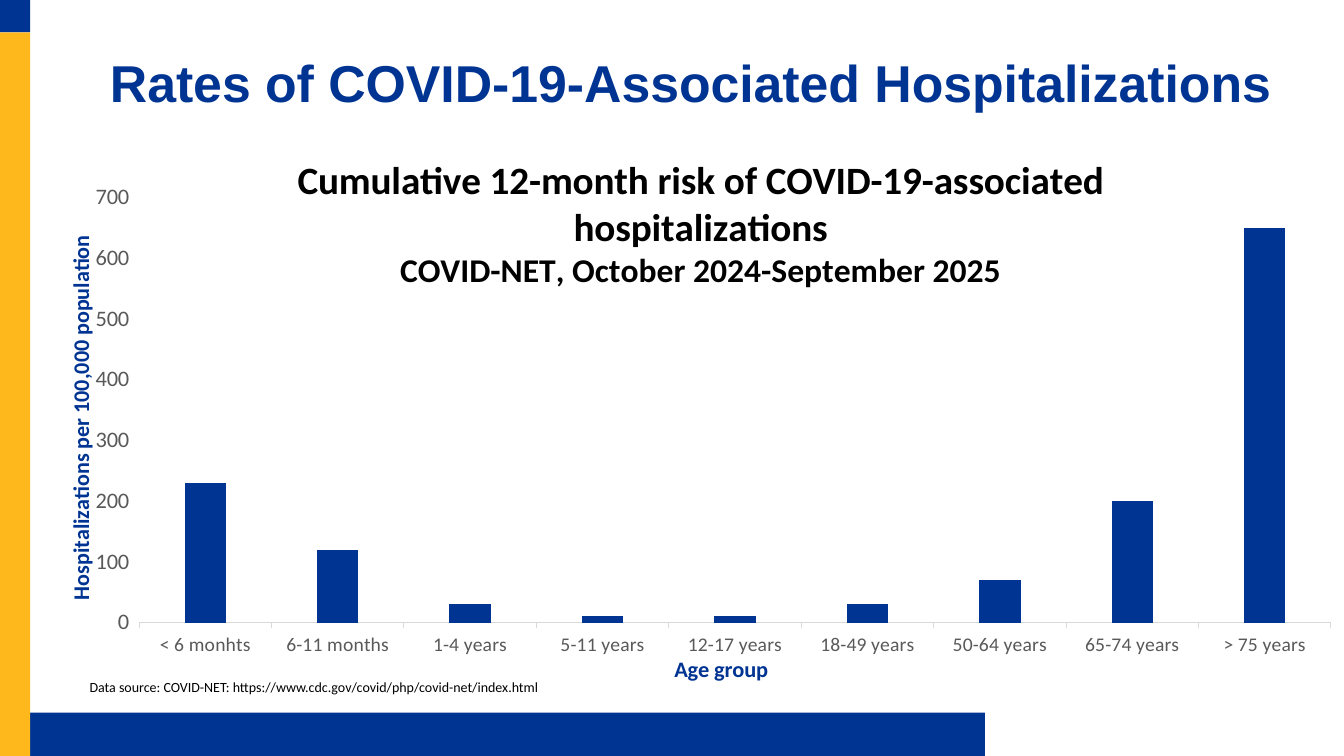
from dataclasses import dataclass

from lxml.etree import fromstring
from pptx import Presentation
from pptx.chart.data import CategoryChartData
from pptx.dml.color import RGBColor
from pptx.enum.chart import XL_CHART_TYPE, XL_TICK_MARK
from pptx.enum.shapes import MSO_SHAPE
from pptx.enum.text import MSO_ANCHOR, PP_ALIGN
from pptx.oxml.ns import nsdecls, qn
from pptx.util import Inches, Pt


@dataclass(frozen=True)
class Theme:
    blue: RGBColor = RGBColor(0x00, 0x34, 0x93)
    gold: RGBColor = RGBColor(0xFF, 0xB8, 0x1C)
    black: RGBColor = RGBColor(0, 0, 0)
    grey: RGBColor = RGBColor(0x59, 0x59, 0x59)
    rule: RGBColor = RGBColor(0xD9, 0xD9, 0xD9)
    heading: float = 37
    chart_title: float = 28
    chart_subtitle: float = 24
    axis: float = 16
    category: float = 14
    source: float = 10


THEME = Theme()
WIDTH, HEIGHT = 13.33, 7.5
BAND = 0.3
RATES = {
    "< 6 monhts": 230, "6-11 months": 120, "1-4 years": 30,
    "5-11 years": 10, "12-17 years": 10, "18-49 years": 30,
    "50-64 years": 70, "65-74 years": 200, "> 75 years": 650,
}


def inches(box):
    return [Inches(v) for v in box]


def style(font, size, color, bold=False, name="Calibri"):
    font.name, font.size, font.bold = name, Pt(size), bold
    font.color.rgb = color


def add_bands(slide):
    top, foot = 0.32, 0.43
    for color, box in (
        (THEME.blue, (BAND, HEIGHT - foot, 9.47, foot)),
        (THEME.gold, (0, top, BAND, HEIGHT - top)),
        (THEME.blue, (0, 0, BAND, top)),
    ):
        s = slide.shapes.add_shape(MSO_SHAPE.RECTANGLE, *inches(box))
        s.shadow.inherit = False
        s.fill.solid()
        s.fill.fore_color.rgb = color
        s.line.fill.background()


def add_heading(slide, box, text):
    s = slide.shapes.title
    s.left, s.top, s.width, s.height = inches(box)
    tf = s.text_frame
    tf.text = text
    tf.margin_left = tf.margin_right = 0
    tf.vertical_anchor = MSO_ANCHOR.TOP
    p = tf.paragraphs[0]
    p.alignment, p.line_spacing = PP_ALIGN.LEFT, 0.9
    style(p.font, THEME.heading, THEME.blue, True, "Arial")


def place(element, x, y, size=None):
    """Fix a chart part at shares of the chart's width and height."""
    for old in element.findall(qn("c:layout")):
        element.remove(old)
    parts = {"xMode": "edge", "yMode": "edge", "x": x, "y": y}
    if size:
        parts = {"layoutTarget": "inner", **parts, "w": size[0], "h": size[1]}
    body = "".join(f'<c:{tag} val="{val}"/>' for tag, val in parts.items())
    layout = fromstring(
        f'<c:layout {nsdecls("c")}><c:manualLayout>{body}</c:manualLayout></c:layout>')
    tx = element.find(qn("c:tx"))
    element.insert(0 if tx is None else element.index(tx) + 1, layout)


def set_title(title, lines, color, x, y):
    tf = title.text_frame
    for i, (text, size) in enumerate(lines):
        p = tf.add_paragraph() if i else tf.paragraphs[0]
        r = p.add_run()
        r.text = text
        style(r.font, size, color, True)
    place(title._element, x, y)
    return tf


def format_axis(axis, size):
    axis.has_major_gridlines = False
    axis.major_tick_mark = XL_TICK_MARK.OUTSIDE
    axis.minor_tick_mark = XL_TICK_MARK.NONE
    style(axis.tick_labels.font, size, THEME.grey)


def add_rates_chart(slide, box):
    data = CategoryChartData()
    data.categories = list(RATES)
    data.add_series("Series 1", list(RATES.values()))
    chart = slide.shapes.add_chart(
        XL_CHART_TYPE.COLUMN_CLUSTERED, *inches(box), data).chart
    style(chart.font, THEME.source, THEME.black)
    chart.has_legend = False

    plot = chart.plots[0]
    plot.gap_width, plot.overlap, plot.vary_by_categories = 219, -27, False
    fill = plot.series[0].format.fill
    fill.solid()
    fill.fore_color.rgb = THEME.blue
    place(chart._chartSpace.chart.plotArea, 0.07, 0.12, (0.92, 0.77))

    ages, rates = chart.category_axis, chart.value_axis
    format_axis(ages, THEME.category)
    format_axis(rates, THEME.axis)
    ages.format.line.color.rgb = THEME.rule
    ages.format.line.width = Pt(0.75)
    rates.format.line.fill.background()
    rates.minimum_scale, rates.maximum_scale, rates.major_unit = 0, 700, 100

    set_title(chart.chart_title, [
        ("Cumulative 12-month risk of COVID-19-associated hospitalizations",
         THEME.chart_title),
        ("COVID-NET, October 2024-September 2025", THEME.chart_subtitle),
    ], THEME.black, 0.19, 0.04)
    set_title(ages.axis_title, [("Age group", THEME.axis)], THEME.blue, 0.48, 0.94)
    tf = set_title(rates.axis_title,
                   [("Hospitalizations per 100,000 population", THEME.axis)],
                   THEME.blue, 0.01, 0.19)
    tf._txBody.bodyPr.set("rot", "-5400000")


def add_source(slide, box, text):
    tf = slide.shapes.add_textbox(*inches(box)).text_frame
    tf.word_wrap = True
    tf.text = text
    style(tf.paragraphs[0].font, THEME.source, THEME.black)


def main():
    prs = Presentation()
    prs.slide_width, prs.slide_height = inches((WIDTH, HEIGHT))
    slide = prs.slides.add_slide(prs.slide_layouts.get_by_name("Title Only"))
    add_bands(slide)
    add_heading(slide, (1.09, 0.52, 11.76, 0.78),
                "Rates of COVID-19-Associated Hospitalizations")
    add_rates_chart(slide, (0.48, 1.3, WIDTH - 0.48, 5.55))
    add_source(slide, (0.79, 6.68, 8.06, 0.27),
               "Data source: COVID-NET: https://www.cdc.gov/covid/php/covid-net/index.html")
    prs.save("out.pptx")


if __name__ == "__main__":
    main()
